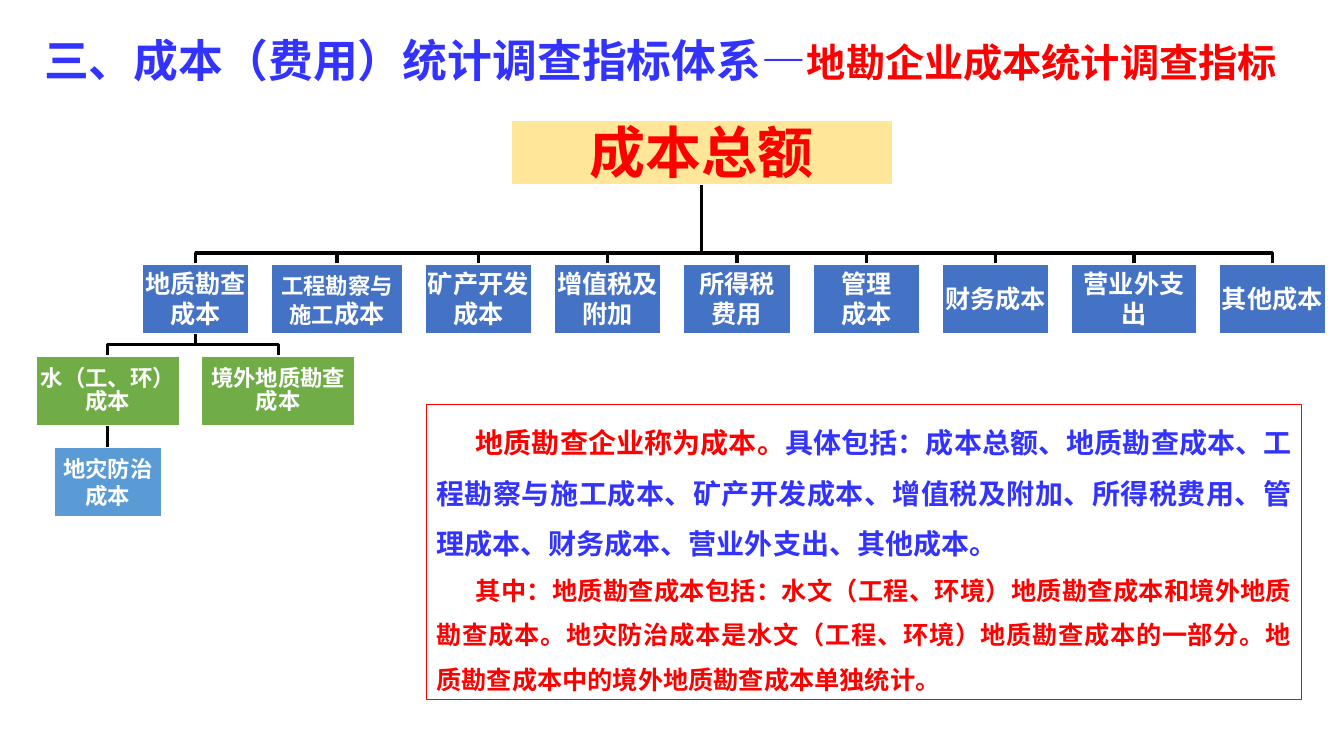
"""Build the cost indicator hierarchy slide."""
from lxml import etree
from pptx import Presentation
from pptx.dml.color import RGBColor
from pptx.enum.shapes import MSO_CONNECTOR, MSO_SHAPE
from pptx.enum.text import MSO_ANCHOR, PP_ALIGN
from pptx.oxml.ns import qn
from pptx.util import Inches, Pt

RECTANGLE, STRAIGHT = MSO_SHAPE.RECTANGLE, MSO_CONNECTOR.STRAIGHT
TOP, MIDDLE = MSO_ANCHOR.TOP, MSO_ANCHOR.MIDDLE
LEFT, CENTER, JUSTIFY = PP_ALIGN.LEFT, PP_ALIGN.CENTER, PP_ALIGN.JUSTIFY
FONT, TITLE_FONT = "Noto Sans CJK SC", "Roboto"
RED, BLUE, WHITE, BLACK = "FF0000", "3333FF", "FFFFFF", "000000"
ROOT_FILL, COST_FILL, DETAIL_FILL, HAZARD_FILL = "FFE699", "4472C4", "70AD47", "5B9BD5"

TITLE = [[("三、成本（费用）统计调查指标体系—", 32, BLUE),
          ("地勘企业成本统计调查指标", 28, RED)]]
ROOT = "成本总额"
COSTS = [
    (["地质勘查", "成本"], 1.06),
    ([[("工程勘察与施工", 16, WHITE), ("成本", 18, WHITE)]], 1.3),
    (["矿产开发", "成本"], 1.06),
    (["增值税及", "附加"], 1.06),
    (["所得税", "费用"], 1.06),
    (["管理", "成本"], 1.06),
    (["财务成本"], 1.06),
    (["营业外支出"], 1.24),
    (["其他成本"], 1.06),
]
DETAILS = [("水（工、环）成本", 0.36, 1.42), ("境外地质勘查成本", 2.0, 1.52)]
HAZARD = ["地灾防治", "成本"]
NOTE = [
    [("地质勘查企业称为成本。", 20, RED),
     ("具体包括：成本总额、地质勘查成本、工程勘察与施工成本、矿产开发成本、增值税及附加、"
      "所得税费用、管理成本、财务成本、营业外支出、其他成本。", 20, BLUE)],
    [("其中：地质勘查成本包括：水文（工程、环境）地质勘查成本和境外地质勘查成本。"
      "地灾防治成本是水文（工程、环境）地质勘查成本的一部分。"
      "地质勘查成本中的境外地质勘查成本单独统计。", 18, RED)],
]

ROW_LEFT, ROW_RIGHT = 1.41, 13.15
ROOT_TOP, COST_TOP, DETAIL_TOP, HAZARD_TOP = 1.19, 2.62, 3.53, 4.44
ROOT_LEFT, ROOT_WIDTH, ROOT_HEIGHT = 5.07, 3.78, 0.64
BOX_HEIGHT, HAZARD_WIDTH, DROP = 0.69, 1.06, 0.11


def color(value):
    return RGBColor.from_string(value)


def write(shape, paragraphs, size=18, ink=WHITE, font=FONT, align=CENTER,
          anchor=MIDDLE, inset=(0.01, 0.01), spacings=None, indent=0):
    frame = shape.text_frame
    frame.word_wrap = True
    frame.vertical_anchor = anchor
    frame.margin_left = frame.margin_right = Inches(inset[0])
    frame.margin_top = frame.margin_bottom = Inches(inset[1])
    for index, content in enumerate(paragraphs):
        para = frame.paragraphs[0] if index == 0 else frame.add_paragraph()
        para.alignment = align
        para.line_spacing = Pt(spacings[index] if spacings else size * 1.19)
        if indent:
            para._p.get_or_add_pPr().set("indent", str(Inches(indent)))
        spans = [(content, size, ink)] if isinstance(content, str) else content
        for text, points, tint in spans:
            span = para.add_run()
            span.text = text
            span.font.size = Pt(points)
            span.font.bold = True
            span.font.color.rgb = color(tint)
            span.font.name = font
            east_asian = etree.SubElement(span._r.get_or_add_rPr(), qn("a:ea"))
            east_asian.set("typeface", FONT)


def add_box(page, left, top, width, height, fill, paragraphs,
            line=WHITE, weight=1, **text_format):
    box = page.shapes.add_shape(RECTANGLE, Inches(left), Inches(top),
                                Inches(width), Inches(height))
    box.shadow.inherit = False
    box.fill.solid()
    box.fill.fore_color.rgb = color(fill)
    box.line.color.rgb = color(line)
    box.line.width = Pt(weight)
    write(box, paragraphs, **text_format)


def add_branch(page, parent_x, parent_y, child_x, child_y):
    points = [(Inches(x), Inches(y)) for x, y in (
        (parent_x, parent_y), (parent_x, child_y - DROP),
        (child_x, child_y - DROP), (child_x, child_y))]
    if parent_x == child_x:
        branch = page.shapes.add_connector(STRAIGHT, *points[0], *points[-1])
        etree.SubElement(branch._element.spPr, qn("a:effectLst"))
    else:
        builder = page.shapes.build_freeform(*points[0])
        builder.add_line_segments(points[1:], close=False)
        branch = builder.convert_to_shape()
        branch.shadow.inherit = False
        branch.fill.background()
    branch.line.color.rgb = color(BLACK)
    branch.line.width = Pt(2.25)


def main():
    deck = Presentation()
    deck.slide_width, deck.slide_height = Inches(13.33), Inches(7.5)
    page = deck.slides.add_slide(deck.slide_layouts[6])

    gap = (ROW_RIGHT - ROW_LEFT - sum(width for _, width in COSTS)) / (len(COSTS) - 1)
    cost_lefts = [ROW_LEFT + sum(width for _, width in COSTS[:index]) + gap * index
                  for index in range(len(COSTS))]
    root_x = ROOT_LEFT + ROOT_WIDTH / 2
    survey_x = ROW_LEFT + COSTS[0][1] / 2
    detail_xs = [left + width / 2 for _, left, width in DETAILS]
    hazard_x = detail_xs[0]

    for left, (_, width) in zip(cost_lefts, COSTS):
        add_branch(page, root_x, ROOT_TOP + ROOT_HEIGHT, left + width / 2, COST_TOP)
    for detail_x in detail_xs:
        add_branch(page, survey_x, COST_TOP + BOX_HEIGHT, detail_x, DETAIL_TOP)
    add_branch(page, hazard_x, DETAIL_TOP + BOX_HEIGHT, hazard_x, HAZARD_TOP)

    add_box(page, ROOT_LEFT, ROOT_TOP, ROOT_WIDTH, ROOT_HEIGHT, ROOT_FILL, [ROOT],
            size=40, ink=RED, inset=(0.03, 0.03), spacings=[46])
    for left, (label, width) in zip(cost_lefts, COSTS):
        add_box(page, left, COST_TOP, width, BOX_HEIGHT, COST_FILL, label)
    for label, left, width in DETAILS:
        add_box(page, left, DETAIL_TOP, width, BOX_HEIGHT, DETAIL_FILL, [label],
                size=16, spacings=[17])
    add_box(page, hazard_x - HAZARD_WIDTH / 2, HAZARD_TOP, HAZARD_WIDTH, BOX_HEIGHT,
            HAZARD_FILL, HAZARD, size=16)

    title = page.shapes.add_textbox(Inches(0.34), Inches(0.39), Inches(12.64), Inches(0.54))
    write(title, TITLE, font=TITLE_FONT, align=LEFT, anchor=TOP,
          inset=(0.1, 0.05), spacings=[30])
    add_box(page, 4.23, 4.01, 8.68, 2.93, WHITE, NOTE, line=RED, weight=0.75,
            align=JUSTIFY, anchor=TOP, inset=(0.1, 0.05), spacings=[36, 32], indent=0.39)
    deck.save("out.pptx")


if __name__ == "__main__":
    main()
